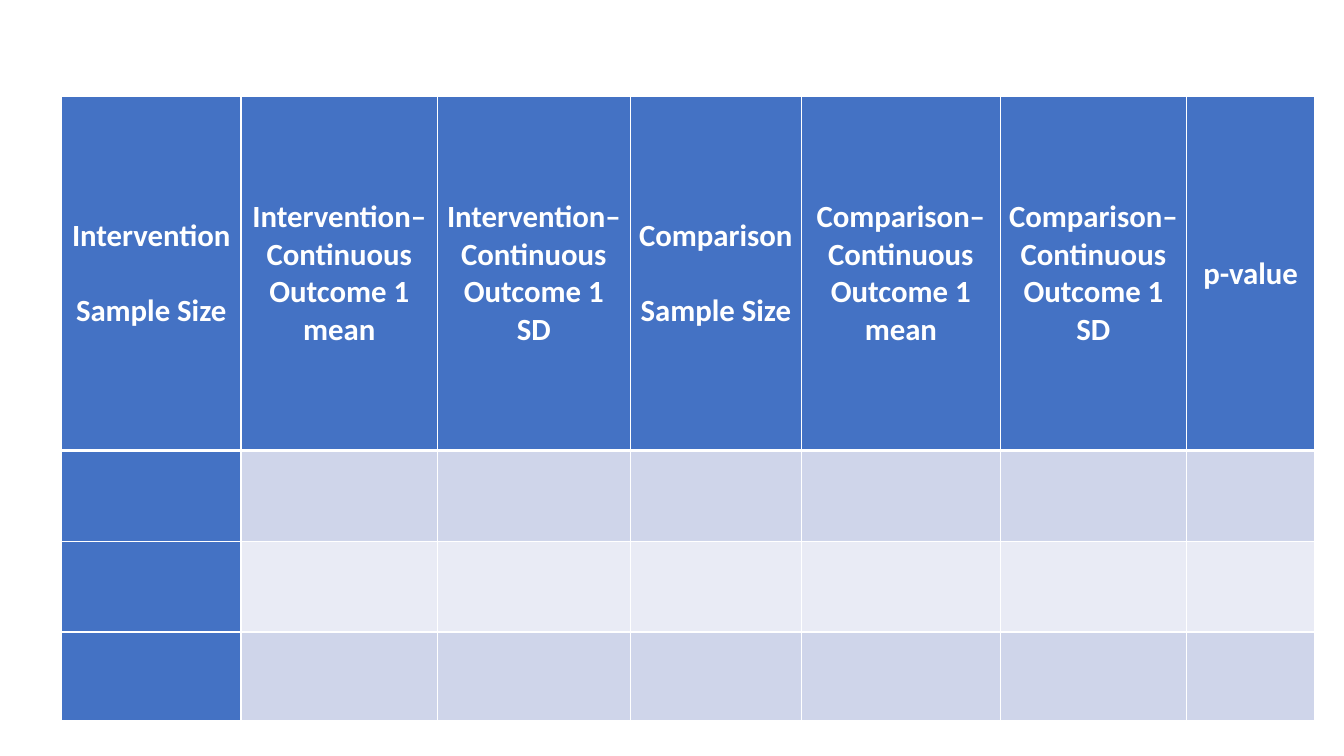
from dataclasses import dataclass

from lxml import etree
from pptx import Presentation
from pptx import util as u
from pptx.dml import color
from pptx.enum import text
from pptx.oxml import ns


@dataclass(frozen=True)
class Theme:
    """Colours and type sizes of the slide."""
    header: str = "4472C4"
    bands: tuple = ("CFD5EA", "E9EBF5")
    light: str = "FFFFFF"
    font: str = "Calibri"
    text_size: float = 22
    line_spacing: float = 1.22
    thin: float = 1
    thick: float = 3


THEME = Theme()
SLIDE_SIZE = (13.33, 7.5)
TABLE_ORIGIN = (0.61, 0.96)
COLUMN_WIDTHS = (1.78, 1.95, 1.91, 1.7, 1.97, 1.85, 1.27)
ROW_HEIGHTS = (3.51, 0.9, 0.9, 0.88)
SPACED_COLUMNS = (0, 3)
HEADINGS = (
    ("Intervention", "Sample Size"),
    ("Intervention–", "Continuous Outcome 1 mean"),
    ("Intervention– Continuous Outcome 1", "SD"),
    ("Comparison", "Sample Size"),
    ("Comparison–Continuous Outcome 1 mean",),
    ("Comparison– Continuous Outcome 1 SD",),
    ("p-value",),
)


def add_border(cell, side, width):
    """Draw a solid line along one side (L, R, T or B) of a cell."""
    line = etree.SubElement(cell._tc.get_or_add_tcPr(), ns.qn(f"a:ln{side}"), w=str(u.Pt(width)))
    fill = etree.SubElement(line, ns.qn("a:solidFill"))
    etree.SubElement(fill, ns.qn("a:srgbClr"), val=THEME.light)


def style_cell(cell, row, column):
    """Give a cell its borders and the fill of its header or band."""
    heavy_sides = {0: "B", 1: "T"}.get(row, "")
    for side in "LRTB":
        add_border(cell, side, THEME.thick if side in heavy_sides else THEME.thin)
    is_header = row == 0 or column == 0
    fill_color = THEME.header if is_header else THEME.bands[(row - 1) % 2]
    cell.fill.solid()
    cell.fill.fore_color.rgb = color.RGBColor.from_string(fill_color)


def write_heading(cell, lines, spaced):
    """Write centred heading lines, with a line's gap between them if spaced."""
    cell.vertical_anchor = text.MSO_ANCHOR.MIDDLE
    cell.margin_left = cell.margin_right = u.Inches(0.07)
    cell.margin_top = cell.margin_bottom = 0
    cell.text_frame.text = "\n".join(lines)
    for index, paragraph in enumerate(cell.text_frame.paragraphs):
        paragraph.alignment = text.PP_ALIGN.CENTER
        if spaced and index:
            paragraph.space_before = u.Pt(THEME.text_size * THEME.line_spacing)
        for run in paragraph.runs:
            run.font.name = THEME.font
            run.font.size = u.Pt(THEME.text_size)
            run.font.bold = True
            run.font.color.rgb = color.RGBColor.from_string(THEME.light)


def add_outcome_table(slide):
    """Add the outcome table with its headings and empty data rows."""
    bounds = (*TABLE_ORIGIN, sum(COLUMN_WIDTHS), sum(ROW_HEIGHTS))
    table = slide.shapes.add_table(
        len(ROW_HEIGHTS), len(COLUMN_WIDTHS), *map(u.Inches, bounds)
    ).table
    table.first_col = True
    for column, width in zip(table.columns, COLUMN_WIDTHS):
        column.width = u.Inches(width)
    for row_index, height in enumerate(ROW_HEIGHTS):
        table.rows[row_index].height = u.Inches(height)
        for column_index in range(len(COLUMN_WIDTHS)):
            style_cell(table.cell(row_index, column_index), row_index, column_index)
    for index, lines in enumerate(HEADINGS):
        write_heading(table.cell(0, index), lines, index in SPACED_COLUMNS)


def main():
    """Build the slide and save the presentation."""
    presentation = Presentation()
    presentation.slide_width, presentation.slide_height = map(u.Inches, SLIDE_SIZE)
    slide = presentation.slides.add_slide(presentation.slide_layouts[6])
    add_outcome_table(slide)
    presentation.save("out.pptx")


if __name__ == "__main__":
    main()
